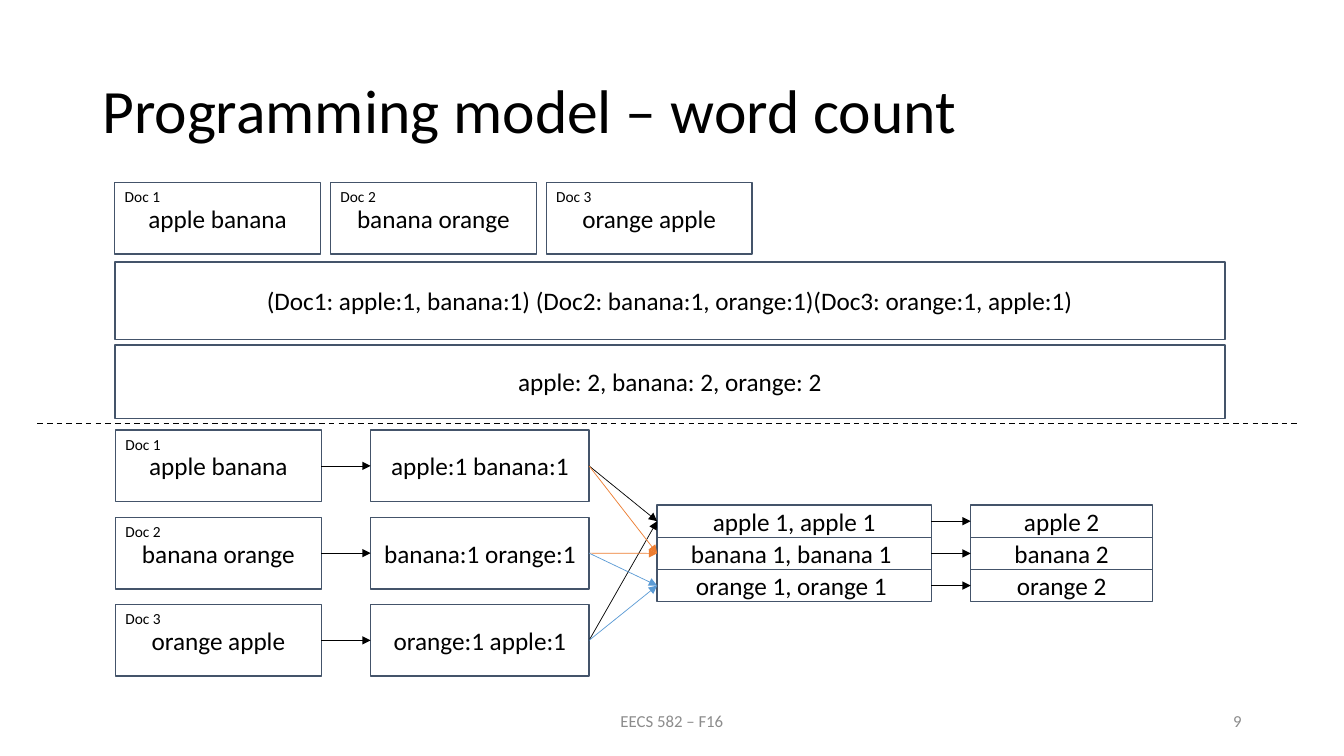
import pptx
import pptx.util
import pptx.dml.color
import pptx.enum.dml
import pptx.enum.shapes
import pptx.enum.text
from lxml import etree

Pt = pptx.util.Pt
ALIGN = pptx.enum.text.PP_ALIGN
ANCHOR = pptx.enum.text.MSO_ANCHOR
NS = "{http://schemas.openxmlformats.org/drawingml/2006/main}"
BLACK, NAVY, ORANGE, BLUE, GREY = "000000", "44546A", "ED7D31", "5B9BD5", "8C8C8C"


def rgb(value):
    return pptx.dml.color.RGBColor.from_string(value)


def write(tf, text, size=18, color=BLACK, align=ALIGN.CENTER,
          anchor=ANCHOR.MIDDLE, spacing=1.0, font="Calibri"):
    tf.word_wrap = True
    tf.vertical_anchor = anchor
    p = tf.paragraphs[0]
    p.alignment = align
    p.line_spacing = spacing
    r = p.add_run()
    r.text = text
    r.font.name = font
    r.font.size = Pt(size)
    r.font.color.rgb = rgb(color)


class Deck:
    outline = NAVY
    outline_width = 1
    arrow_width = 0.5

    def __init__(self, width, height):
        self.prs = pptx.Presentation()
        self.prs.slide_width = Pt(width)
        self.prs.slide_height = Pt(height)
        self.s = self.prs.slides.add_slide(self.prs.slide_layouts[6])

    def label(self, x, y, w, h, text, **style):
        sp = self.s.shapes.add_textbox(Pt(x), Pt(y), Pt(w), Pt(h))
        write(sp.text_frame, text, **style)

    def box(self, x, y, w, h, text):
        sp = self.s.shapes.add_shape(
            pptx.enum.shapes.MSO_SHAPE.RECTANGLE, Pt(x), Pt(y), Pt(w), Pt(h))
        sp.shadow.inherit = False
        sp.fill.background()
        sp.line.color.rgb = rgb(self.outline)
        sp.line.width = Pt(self.outline_width)
        write(sp.text_frame, text)

    def doc(self, x, y, w, h, number, text):
        self.box(x, y, w, h, text)
        self.label(x, y, 64, 20.6, f"Doc {number}", size=11,
                   align=ALIGN.LEFT, anchor=ANCHOR.TOP)

    def line(self, x1, y1, x2, y2, color=BLACK, width=1):
        c = self.s.shapes.add_connector(
            pptx.enum.shapes.MSO_CONNECTOR.STRAIGHT, Pt(x1), Pt(y1), Pt(x2), Pt(y2))
        c.line.color.rgb = rgb(color)
        c.line.width = Pt(width)
        etree.SubElement(c._element.spPr, NS + "effectLst")
        return c

    def dashed(self, x1, y1, x2, y2):
        c = self.line(x1, y1, x2, y2)
        c.line.dash_style = pptx.enum.dml.MSO_LINE.DASH

    def arrow(self, x1, y1, x2, y2, color=BLACK):
        c = self.line(x1, y1, x2, y2, color, self.arrow_width)
        etree.SubElement(c.line._get_or_add_ln(), NS + "tailEnd", type="triangle")


def main():
    deck = Deck(960, 540)
    deck.label(66, 28.8, 828, 104.4, "Programming model – word count",
               size=44, align=ALIGN.LEFT, spacing=0.9)
    deck.label(318, 500.4, 324, 28.8, "EECS 582 – F16", size=12, color=GREY)
    deck.label(678, 500.4, 216, 28.8, "9", size=12, color=GREY, align=ALIGN.RIGHT)

    docs = ["apple banana", "banana orange", "orange apple"]
    mapped = ["apple:1 banana:1", "banana:1 orange:1", "orange:1 apple:1"]
    grouped = ["apple 1, apple 1", "banana 1, banana 1 ", "orange 1, orange 1 "]
    reduced = ["apple 2", "banana 2", "orange 2"]
    left, doc_w, doc_h = 82.5, 147, 51.2
    map_x, map_w = 264.8, 156
    group_x, group_w = 469.4, 195.8
    result_x, result_w = 693.4, 129.8
    row_h = 23

    for i, text in enumerate(docs):
        deck.doc(82 + 154.1 * i, 130.4, doc_w, doc_h, i + 1, text)
    deck.box(82, 187.2, 793, 55.4,
             "(Doc1: apple:1, banana:1) (Doc2: banana:1, orange:1)(Doc3: orange:1, apple:1)")
    deck.box(82, 246.4, 793, 52.4, "apple: 2, banana: 2, orange: 2")
    deck.dashed(26.6, 302.4, 928, 302.4)

    doc_mid, row_mid = [], []
    for i in range(3):
        y = 307.2 + 62.3 * i
        mid = y + doc_h / 2
        doc_mid.append(mid)
        deck.doc(left, y, doc_w, doc_h, i + 1, docs[i])
        deck.box(map_x, y, map_w, doc_h, mapped[i])
        deck.arrow(left + doc_w, mid, map_x, mid)

        y = 360.8 + row_h * i
        mid = y + row_h / 2
        row_mid.append(mid)
        deck.box(group_x, y, group_w, row_h, grouped[i])
        deck.box(result_x, y, result_w, row_h, reduced[i])
        deck.arrow(group_x + group_w, mid, result_x, mid)

    shuffle = [(0, 0, BLACK), (2, 0, BLACK), (1, 1, ORANGE),
               (0, 1, ORANGE), (1, 2, BLUE), (2, 2, BLUE)]
    for source, target, color in shuffle:
        deck.arrow(map_x + map_w, doc_mid[source], group_x, row_mid[target], color)

    deck.prs.save("out.pptx")


if __name__ == "__main__":
    main()
